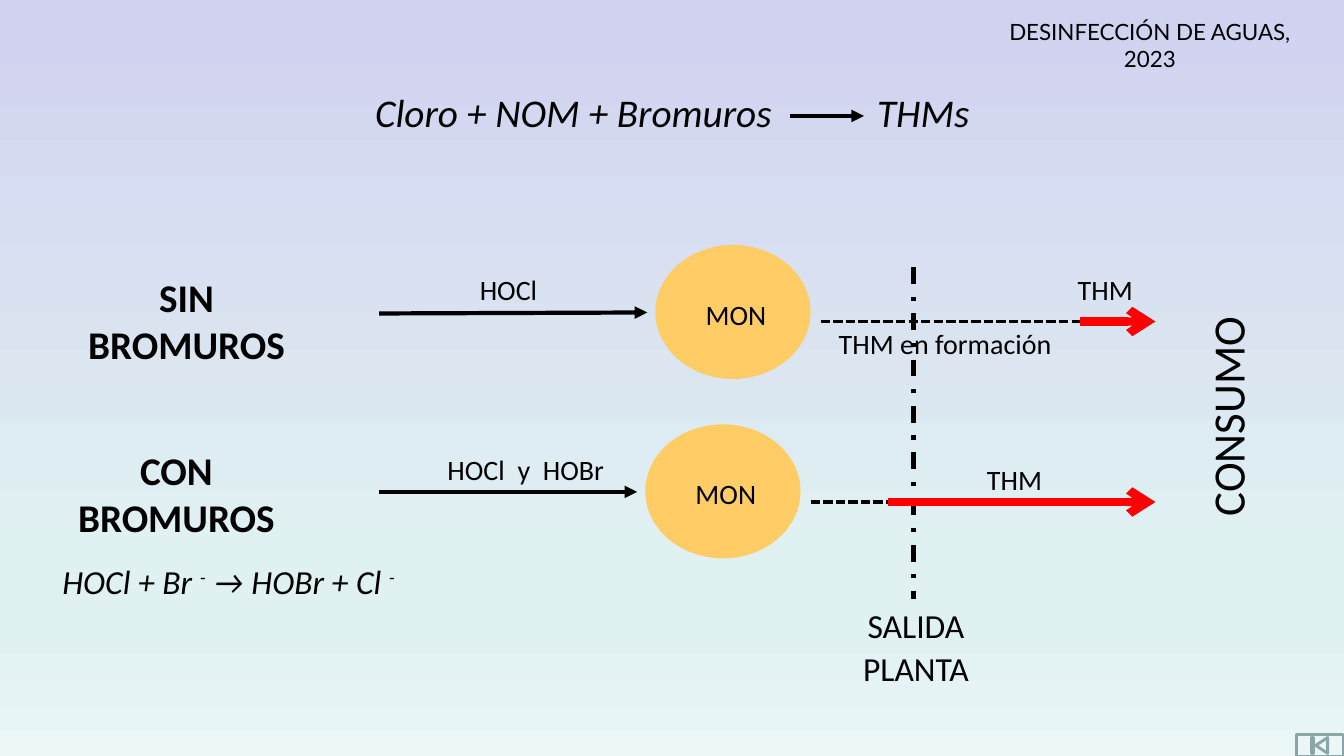
from dataclasses import dataclass

from lxml import etree
from pptx import Presentation
from pptx import util as u
from pptx.dml.color import RGBColor
from pptx.enum import dml, shapes, text
from pptx.oxml.ns import qn


@dataclass(frozen=True)
class Theme:
    black: str = "000000"
    red: str = "FF0000"
    amber: str = "FFCC66"
    button: str = "8AA6A8"
    sky: tuple = ((0, "D1D1F0"), (74, "E0F1F2"), (83, "E0F1F2"), (100, "EBF6F7"))
    font: str = "Calibri"
    header_font: str = "Lato"
    header: int = 16
    label: int = 20
    note: int = 24
    heading: int = 28
    side: int = 32


T = Theme()
CENTER = text.PP_ALIGN.CENTER
DASH = dml.MSO_LINE.SQUARE_DOT
DASH_DOT = dml.MSO_LINE.DASH_DOT

prs = Presentation()
prs.slide_width, prs.slide_height = u.Inches(13.33), u.Inches(7.5)
s = prs.slides.add_slide(prs.slide_layouts[5])

fill = s.background.fill
fill.gradient()
fill.gradient_angle = 270
stops = s.background.fill._xPr.find(qn("a:gradFill")).find(qn("a:gsLst"))
for stop in list(stops):
    stops.remove(stop)
for position, color in T.sky:
    stop = etree.SubElement(stops, qn("a:gs"), pos=str(position * 1000))
    etree.SubElement(stop, qn("a:srgbClr"), val=color)


def write(sp, box, runs, size, align=None, spacing=None, after=0,
          font=T.font, bold=False, italic=False):
    sp.left, sp.top, sp.width, sp.height = map(u.Inches, box)
    tf = sp.text_frame
    tf.word_wrap = True
    tf.auto_size = text.MSO_AUTO_SIZE.NONE
    tf.vertical_anchor = text.MSO_ANCHOR.TOP
    p = tf.paragraphs[0]
    p.alignment = align
    p.line_spacing = spacing
    p.space_after = u.Pt(after)
    for words, raised in runs:
        r = p.add_run()
        r.text = words
        r.font.name, r.font.size = font, u.Pt(size)
        r.font.bold, r.font.italic = bold, italic
        r.font.color.rgb = RGBColor.from_string(T.black)
        if raised:
            r.font._element.set("baseline", "30000")
    return p


def draw_line(start, end, color=T.black, width=3, dash=None, head=None):
    line = s.shapes.add_connector(
        shapes.MSO_CONNECTOR.STRAIGHT, *map(u.Inches, start + end))
    line.line.color.rgb = RGBColor.from_string(color)
    line.line.width = u.Pt(width)
    if dash:
        line.line.dash_style = dash
    if head:
        etree.SubElement(line.line._get_or_add_ln(), qn("a:tailEnd"), type=head)
    etree.SubElement(line._element.spPr, qn("a:effectLst"))


button = s.shapes.add_shape(
    shapes.MSO_SHAPE.ACTION_BUTTON_BEGINNING,
    *map(u.Inches, (12.86, 7.29, 0.46, 0.21)))
button.shadow.inherit = False
button.fill.background()
button.line.color.rgb = RGBColor.from_string(T.button)
button.line.width = u.Pt(2)

title = s.shapes.title
p = write(title, (0.83, 0.79, 11.67, 0.58),
          [("Cloro + NOM + Bromuros\tTHMs", False)], T.heading,
          align=text.PP_ALIGN.LEFT, spacing=1.07, after=8, italic=True)
title.text_frame.margin_left = u.Inches(2.89)
tabs = etree.SubElement(p._p.get_or_add_pPr(), qn("a:tabLst"))
etree.SubElement(tabs, qn("a:tab"), pos=str(u.Inches(4.98)), algn="l")
draw_line((7.84, 1.15), (8.57, 1.15), head="triangle")

for left, top in ((6.5, 2.43), (6.4, 4.21)):
    circle = s.shapes.add_shape(
        shapes.MSO_SHAPE.OVAL, *map(u.Inches, (left, top, 1.54, 1.33)))
    circle.shadow.inherit = False
    circle.fill.solid()
    circle.fill.fore_color.rgb = RGBColor.from_string(T.amber)
    circle.line.fill.background()
    write(s.shapes.add_textbox(0, 0, 0, 0), (left + 0.4, top + 0.47, 1.04, 0.44),
          [("MON", False)], T.label)

draw_line((9.06, 2.65), (9.06, 5.94), dash=DASH_DOT)

reactions = (
    ((3.76, 3.11), (6.42, 3.1), 8.14, 10.71, 10.71, 3.19),
    ((3.76, 4.88), (6.32, 4.88), 8.04, 9.57, 8.81, 4.98),
)
for start, end, dash_left, dash_right, red_left, y in reactions:
    draw_line(start, end, head="triangle")
    draw_line((dash_left, y), (dash_right, y), width=2.25, dash=DASH)
    draw_line((red_left, y), (11.46, y), color=T.red, width=6, head="arrow")

for words, left, top, width in (
    ("HOCl", 4.66, 2.65, 1.09),
    ("HOCl  y  HOBr", 4.34, 4.44, 1.86),
    ("THM", 10.59, 2.65, 1.02),
    ("THM", 9.69, 4.54, 1.02),
    ("THM en formación", 8.22, 3.19, 2.51),
):
    write(s.shapes.add_textbox(0, 0, 0, 0), (left, top, width, 0.44),
          [(words, False)], T.label)

for words, left, top in (("SIN BROMUROS", 0.62, 2.66), ("CON BROMUROS", 0.52, 4.38)):
    write(s.shapes.add_textbox(0, 0, 0, 0), (left, top, 2.46, 1.04),
          [(words, False)], T.heading, align=CENTER, bold=True)

write(s.shapes.add_textbox(0, 0, 0, 0), (0.52, 5.49, 3.7, 0.51),
      [("HOCl + Br ", False), ("-", True), (" → HOBr + Cl ", False), ("-", True)],
      T.note, align=text.PP_ALIGN.JUSTIFY, spacing=1.07, after=4, italic=True)

write(s.shapes.add_textbox(0, 0, 0, 0), (8.21, 5.92, 1.75, 0.95),
      [("SALIDA PLANTA", False)], T.note, align=CENTER, spacing=1.07, after=4)

consumption = s.shapes.add_textbox(0, 0, 0, 0)
write(consumption, (10.71, 3.44, 2.92, 0.64), [("CONSUMO", False)], T.side)
consumption.rotation = 270

write(s.shapes.add_textbox(0, 0, 0, 0), (9.82, 0.13, 3.17, 0.37),
      [("DESINFECCIÓN DE AGUAS, 2023", False)], T.header,
      align=CENTER, font=T.header_font)

prs.save("out.pptx")
